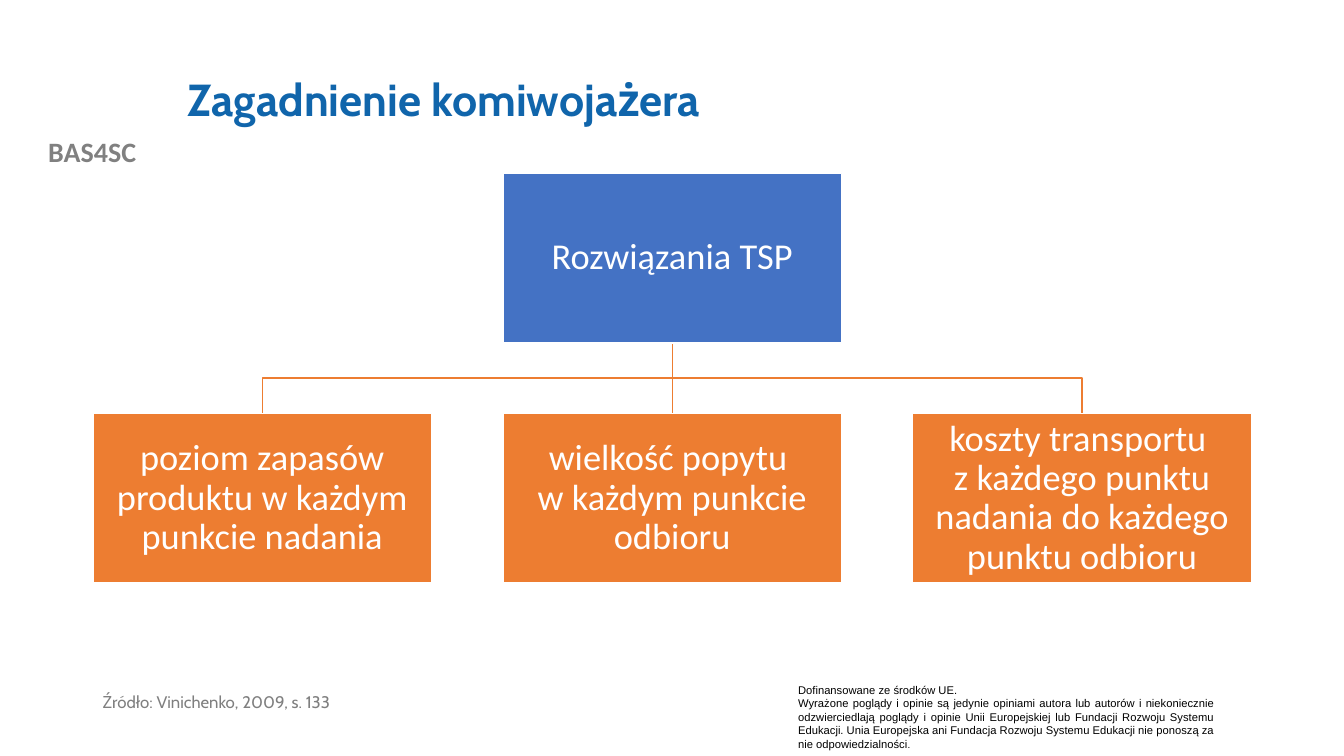
from pptx import Presentation
from pptx.dml.color import RGBColor
from pptx.enum.shapes import MSO_CONNECTOR, MSO_SHAPE
from pptx.enum.text import MSO_ANCHOR, PP_ALIGN
from pptx.oxml.ns import qn
from pptx.util import Pt
from lxml.etree import SubElement

BLUE = RGBColor(0x44, 0x72, 0xC4)
ORANGE = RGBColor(0xED, 0x7D, 0x31)
TITLE_BLUE = RGBColor(0x10, 0x65, 0xAB)
GREY = RGBColor(0x80, 0x80, 0x80)
SOURCE_GREY = RGBColor(0x7F, 0x7F, 0x7F)
WHITE = RGBColor(0xFF, 0xFF, 0xFF)
BLACK = RGBColor(0, 0, 0)

PROJECT = "BAS4SC"
TITLE = "Zagadnienie komiwojażera"
SOURCE = "Źródło: Vinichenko, 2009, s. 133"
FUNDING = "Dofinansowane ze środków UE."
DISCLAIMER = (
    "Wyrażone poglądy i opinie są jedynie opiniami autora lub autorów i niekoniecznie "
    "odzwierciedlają poglądy i opinie Unii Europejskiej lub Fundacji Rozwoju Systemu "
    "Edukacji. Unia Europejska ani Fundacja Rozwoju Systemu Edukacji nie ponoszą za "
    "nie odpowiedzialności"
)
ROOT = "Rozwiązania TSP"
BRANCHES = [
    "poziom zapasów produktu w każdym punkcie nadania",
    "wielkość popytu \vw każdym punkcie odbioru",
    "koszty transportu \vz każdego punktu nadania do każdego punktu odbioru",
]

NODE_WIDTH, NODE_HEIGHT = 242, 121
FIRST_LEFT, STEP = 66.4, 292.8
ROOT_TOP, BRANCH_TOP = 123.9, 295.4


def style(para, size, font, color, bold=False, align=PP_ALIGN.LEFT, spacing=1.0):
    para.alignment = align
    para.line_spacing = spacing
    para.font.size = Pt(size)
    para.font.name = font
    para.font.bold = bold
    para.font.color.rgb = color


def add_text(page, left, top, width, height, text, anchor=MSO_ANCHOR.TOP, **look):
    box = page.shapes.add_textbox(Pt(left), Pt(top), Pt(width), Pt(height))
    frame = box.text_frame
    frame.word_wrap = True
    frame.vertical_anchor = anchor
    frame.text = text
    for para in frame.paragraphs:
        style(para, **look)
    return frame


def add_node(page, left, top, text, fill):
    node = page.shapes.add_shape(
        MSO_SHAPE.RECTANGLE, Pt(left), Pt(top), Pt(NODE_WIDTH), Pt(NODE_HEIGHT))
    node.shadow.inherit = False
    node.fill.solid()
    node.fill.fore_color.rgb = fill
    node.line.color.rgb = WHITE
    node.line.width = Pt(1)
    frame = node.text_frame
    frame.word_wrap = True
    frame.vertical_anchor = MSO_ANCHOR.MIDDLE
    frame.margin_left = frame.margin_right = Pt(1.3)
    frame.margin_top = frame.margin_bottom = Pt(1.3)
    para = frame.paragraphs[0]
    para.text = text
    style(para, 26, "Calibri", WHITE, align=PP_ALIGN.CENTER, spacing=0.9)


def add_link(page, start, end):
    (x1, y1), (x2, y2) = start, end
    if x1 == x2:
        link = page.shapes.add_connector(
            MSO_CONNECTOR.STRAIGHT, Pt(x1), Pt(y1), Pt(x2), Pt(y2))
        SubElement(link._element.spPr, qn("a:effectLst"))
    else:
        middle = (y1 + y2) / 2
        builder = page.shapes.build_freeform(Pt(x1), Pt(y1))
        corners = [(x1, middle), (x2, middle), (x2, y2)]
        builder.add_line_segments([(Pt(x), Pt(y)) for x, y in corners], close=False)
        link = builder.convert_to_shape()
        link.shadow.inherit = False
        link.fill.background()
    link.line.color.rgb = ORANGE
    link.line.width = Pt(1)


def main():
    deck = Presentation()
    deck.slide_width, deck.slide_height = Pt(960), Pt(540)
    page = deck.slides.add_slide(deck.slide_layouts[6])

    add_text(page, 0, 92.2, 131.8, 31.5, PROJECT, size=20, font="Calibri",
             color=GREY, bold=True, align=PP_ALIGN.CENTER)
    legal = add_text(page, 563, 484.6, 311.8, 55.4, f"{FUNDING}\n{DISCLAIMER}",
                     size=8, font="Arial", color=BLACK, align=PP_ALIGN.JUSTIFY)
    span = legal.paragraphs[1].add_run()
    span.text = "."
    span.font.size = Pt(7)
    add_text(page, 66.2, 492.5, 360.7, 37.4, SOURCE, size=12, font="Cabin",
             color=SOURCE_GREY, spacing=0.9)
    add_text(page, 126.7, 28.8, 833, 87.8, TITLE, MSO_ANCHOR.MIDDLE, size=32,
             font="Cabin", color=TITLE_BLUE, bold=True, spacing=0.9)

    lefts = [FIRST_LEFT + STEP * index for index in range(len(BRANCHES))]
    root_left = lefts[1]
    half = NODE_WIDTH / 2
    for left in lefts:
        add_link(page, (root_left + half, ROOT_TOP + NODE_HEIGHT), (left + half, BRANCH_TOP))
    add_node(page, root_left, ROOT_TOP, ROOT, BLUE)
    for left, text in zip(lefts, BRANCHES):
        add_node(page, left, BRANCH_TOP, text, ORANGE)

    deck.save("out.pptx")


if __name__ == "__main__":
    main()
